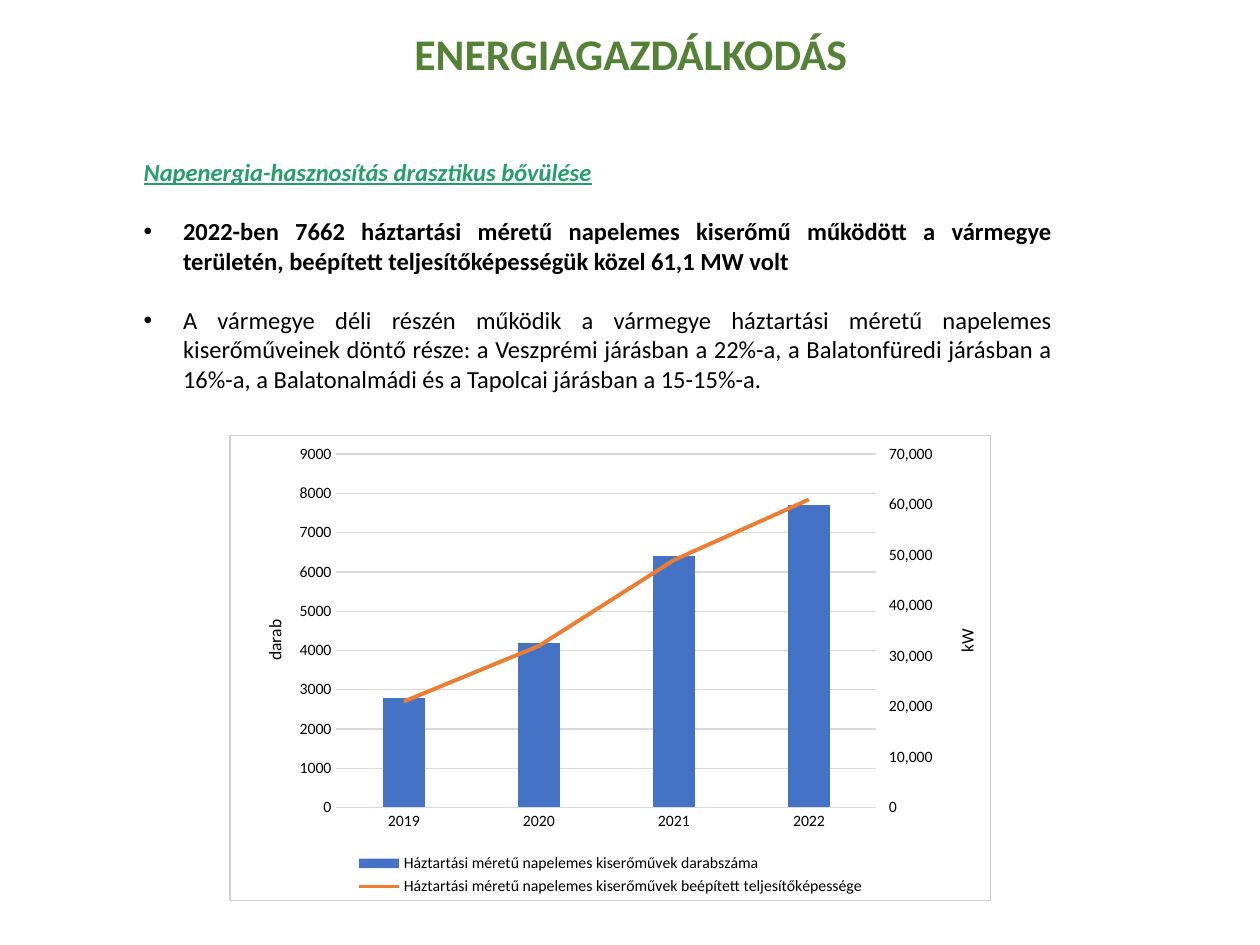
"""Build the slide on solar energy use with a combined column and line chart."""
import copy

import lxml.etree
import pptx
import pptx.chart.data
import pptx.dml.color
import pptx.enum.chart
import pptx.enum.text
import pptx.oxml
import pptx.oxml.ns
import pptx.util

Pt = pptx.util.Pt
RGBColor = pptx.dml.color.RGBColor
qn = pptx.oxml.ns.qn
ALIGN = pptx.enum.text.PP_ALIGN
ANCHOR = pptx.enum.text.MSO_ANCHOR
TICK = pptx.enum.chart.XL_TICK_MARK

BLACK = RGBColor(0x00, 0x00, 0x00)
TITLE_GREEN = RGBColor(0x53, 0x81, 0x35)
HEADING_GREEN = RGBColor(0x24, 0x9F, 0x6A)
GRID_GRAY = RGBColor(0xD9, 0xD9, 0xD9)
BLUE = RGBColor(0x44, 0x72, 0xC4)
ORANGE = RGBColor(0xED, 0x7D, 0x31)
BORDER_XML = (
    f'<c:spPr {pptx.oxml.ns.nsdecls("c", "a")}><a:noFill/><a:ln w="9525">'
    '<a:solidFill><a:srgbClr val="D0CECE"/></a:solidFill></a:ln></c:spPr>'
)

FONT = "Calibri"
INDENT = 22.5
TITLE_BOX = (36.5, 6.5, 648, 52)
BODY_BOX = (75, 88, 533.5, 141)
CHART_BOX = (131, 248.5, 435.5, 266.5)

TITLE = [
    ("ENERGIAGAZDÁLKODÁS", False,
     {"alignment": ALIGN.CENTER, "line_spacing": 0.9},
     {"size": Pt(25), "bold": True, "name": FONT}, TITLE_GREEN),
]
BULLET = {"alignment": ALIGN.JUSTIFY, "space_before": Pt(17)}
BODY = [
    ("Napenergia-hasznosítás drasztikus bővülése", False, {"line_spacing": 0.9},
     {"size": Pt(14), "bold": True, "italic": True, "underline": True, "name": FONT},
     HEADING_GREEN),
    ("2022-ben 7662 háztartási méretű napelemes kiserőmű működött a vármegye "
     "területén, beépített teljesítőképességük közel 61,1 MW volt",
     True, BULLET, {"size": Pt(14), "bold": True, "name": FONT}, BLACK),
    ("A vármegye déli részén működik a vármegye háztartási méretű napelemes "
     "kiserőműveinek döntő része: a Veszprémi járásban a 22%-a, a Balatonfüredi "
     "járásban a 16%-a, a Balatonalmádi és a Tapolcai járásban a 15-15%-a.",
     True, BULLET, {"size": Pt(14), "bold": False, "name": FONT}, BLACK),
]
YEARS = ["2019", "2020", "2021", "2022"]
SERIES = [
    ("Háztartási méretű napelemes kiserőművek darabszáma", [2800, 4200, 6400, 7700]),
    ("Háztartási méretű napelemes kiserőművek beépített teljesítőképessége",
     [21000, 32000, 49000, 61000]),
]
PLOT_LAYOUT = {"layoutTarget": "inner", "xMode": "edge", "yMode": "edge",
               "x": 0.14, "y": 0.04, "w": 0.71, "h": 0.76}
LEGEND_LAYOUT = {"xMode": "edge", "yMode": "edge", "x": 0.16, "y": 0.89, "w": 0.68, "h": 0.11}
LEFT_TITLE_LAYOUT = {"xMode": "edge", "yMode": "edge", "x": 0.04, "y": 0.39}
RIGHT_TITLE_LAYOUT = {"xMode": "edge", "yMode": "edge", "x": 0.95, "y": 0.41}
RIGHT_AXIS = {"c:axId": "5002", "c:crossAx": "5001", "c:axPos": "r", "c:crosses": "max",
              "c:majorTickMark": "out", "c:scaling/c:max": "70000", "c:majorUnit": "10000"}
HIDDEN_AXIS = {"c:axId": "5001", "c:crossAx": "5002", "c:delete": "1"}


def apply(target, values):
    for name, value in values.items():
        setattr(target, name, value)


def style_font(font, size, color=BLACK):
    apply(font, {"size": Pt(size), "name": FONT, "bold": False})
    font.color.rgb = color


def style_line(line, color, width):
    line.color.rgb = color
    line.width = Pt(width)


def add_text(page, place, paragraphs, anchor):
    frame = page.shapes.add_textbox(*map(Pt, place)).text_frame
    apply(frame, {"word_wrap": True, "vertical_anchor": anchor})
    for index, (text, bulleted, layout, style, color) in enumerate(paragraphs):
        para = frame.add_paragraph() if index else frame.paragraphs[0]
        if bulleted:
            properties = para._p.get_or_add_pPr()
            properties.set("marL", str(Pt(INDENT)))
            properties.set("indent", str(-Pt(INDENT)))
            lxml.etree.SubElement(properties, qn("a:buFont")).set("typeface", "Arial")
            lxml.etree.SubElement(properties, qn("a:buChar")).set("char", "•")
        apply(para, layout)
        span = para.add_run()
        span.text = text
        apply(span.font, style)
        span.font.color.rgb = color


def remove_children(element, name):
    for child in element.findall(qn(name)):
        element.remove(child)


def set_layout(element, values, index=1):
    remove_children(element, "c:layout")
    layout = pptx.oxml.parse_xml(f'<c:layout {pptx.oxml.ns.nsdecls("c")}/>')
    manual = lxml.etree.SubElement(layout, qn("c:manualLayout"))
    for name, value in values.items():
        lxml.etree.SubElement(manual, qn("c:" + name)).set("val", str(value))
    element.insert(index, layout)


def copy_axis(axis, values):
    twin = copy.deepcopy(axis)
    for name, value in values.items():
        twin.find("/".join(qn(part) for part in name.split("/"))).set("val", value)
    return twin


def move_to_line(chart):
    area = chart._chartSpace.chart.plotArea
    bars = area.find(qn("c:barChart"))
    series = bars.findall(qn("c:ser"))[1]
    bars.remove(series)
    remove_children(series, "c:invertIfNegative")
    lines = pptx.oxml.parse_xml(f'<c:lineChart {pptx.oxml.ns.nsdecls("c")}/>')
    lxml.etree.SubElement(lines, qn("c:grouping")).set("val", "standard")
    lxml.etree.SubElement(lines, qn("c:varyColors")).set("val", "0")
    lines.append(series)
    lxml.etree.SubElement(lines, qn("c:marker")).set("val", "1")
    for axis in (HIDDEN_AXIS, RIGHT_AXIS):
        lxml.etree.SubElement(lines, qn("c:axId")).set("val", axis["c:axId"])
    bars.addnext(lines)
    value_axis = area.find(qn("c:valAx"))
    right = copy_axis(value_axis, RIGHT_AXIS)
    remove_children(right, "c:majorGridlines")
    right.find(qn("c:numFmt")).set("formatCode", "#,##0")
    title = right.find(qn("c:title"))
    next(title.iter(qn("a:t"))).text = "kW"
    set_layout(title, RIGHT_TITLE_LAYOUT)
    value_axis.addnext(right)
    right.addnext(copy_axis(area.find(qn("c:catAx")), HIDDEN_AXIS))
    set_layout(area, PLOT_LAYOUT, 0)


def add_combined_chart(page):
    data = pptx.chart.data.CategoryChartData()
    data.categories = YEARS
    for name, values in SERIES:
        data.add_series(name, values)
    kind = pptx.enum.chart.XL_CHART_TYPE.COLUMN_CLUSTERED
    chart = page.shapes.add_chart(kind, *map(Pt, CHART_BOX), data).chart
    apply(chart, {"has_title": False, "has_legend": True})
    style_font(chart.font, 10)
    apply(chart.legend, {"position": pptx.enum.chart.XL_LEGEND_POSITION.BOTTOM,
                         "include_in_layout": False})
    style_font(chart.legend.font, 9)
    set_layout(chart.legend._element, LEGEND_LAYOUT)

    for axis in (chart.category_axis, chart.value_axis):
        apply(axis, {"major_tick_mark": TICK.NONE, "minor_tick_mark": TICK.NONE})
        style_font(axis.tick_labels.font, 9)
    style_line(chart.category_axis.format.line, GRID_GRAY, 0.75)
    left = chart.value_axis
    apply(left, {"minimum_scale": 0, "maximum_scale": 9000, "major_unit": 1000,
                 "has_major_gridlines": True, "has_title": True})
    apply(left.tick_labels, {"number_format": "0", "number_format_is_linked": False})
    left.format.line.fill.background()
    style_line(left.major_gridlines.format.line, GRID_GRAY, 0.75)
    frame = left.axis_title.text_frame
    frame.text = "darab"
    style_font(frame.paragraphs[0].runs[0].font, 10)
    frame._txBody.find(qn("a:bodyPr")).attrib.update({"rot": "-5400000", "vert": "horz"})
    set_layout(left.axis_title._element, LEFT_TITLE_LAYOUT)

    move_to_line(chart)
    columns, lines = chart.plots
    apply(columns, {"gap_width": 219, "overlap": -27, "vary_by_categories": False})
    fill = columns.series[0].format.fill
    fill.solid()
    fill.fore_color.rgb = BLUE
    power = lines.series[0]
    power.smooth = False
    power.marker.style = pptx.enum.chart.XL_MARKER_STYLE.NONE
    style_line(power.format.line, ORANGE, 2.25)
    chart._chartSpace.find(qn("c:txPr")).addprevious(pptx.oxml.parse_xml(BORDER_XML))


def main():
    deck = pptx.Presentation()
    apply(deck, {"slide_width": Pt(720), "slide_height": Pt(540)})
    page = deck.slides.add_slide(deck.slide_layouts[6])
    add_combined_chart(page)
    add_text(page, BODY_BOX, BODY, ANCHOR.TOP)
    add_text(page, TITLE_BOX, TITLE, ANCHOR.MIDDLE)
    deck.save("out.pptx")


if __name__ == "__main__":
    main()
